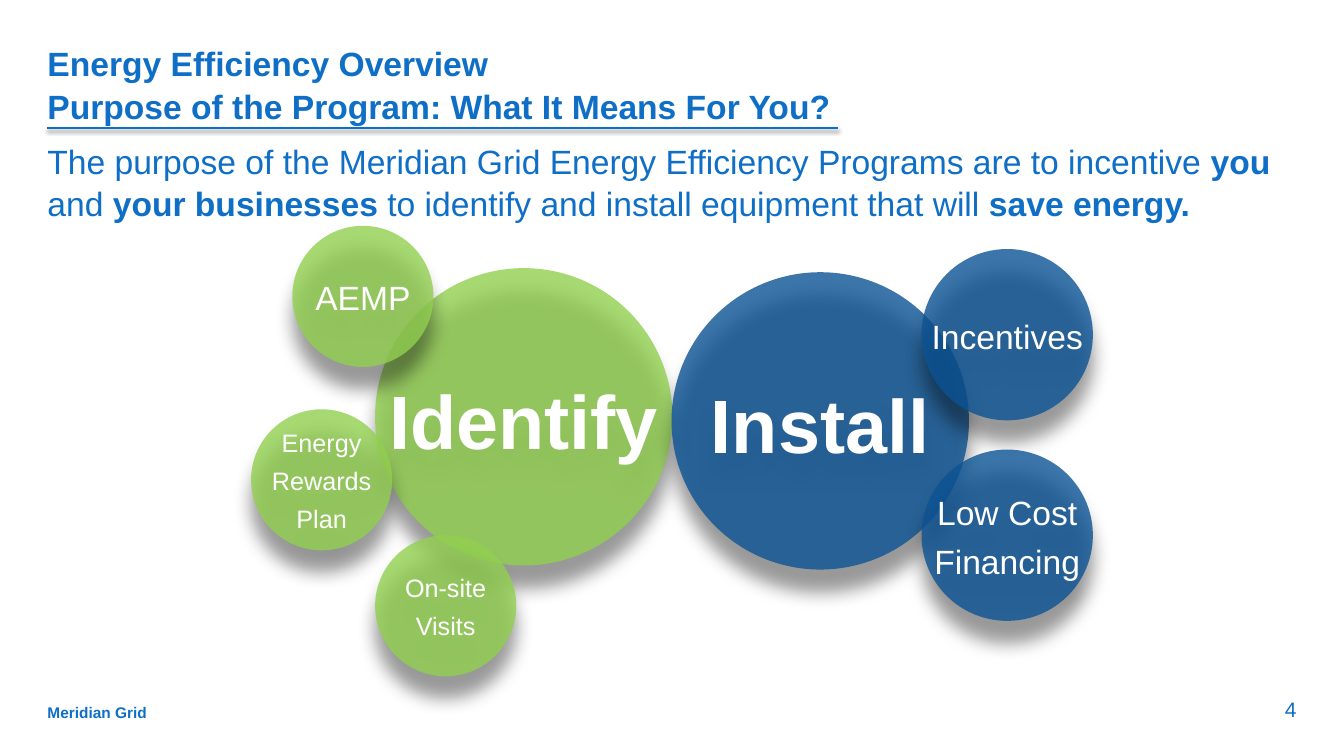
import pptx
import pptx.util
import pptx.dml.color
import pptx.enum.shapes
import pptx.enum.text
import pptx.oxml.ns
from dataclasses import dataclass
from lxml import etree

Align = pptx.enum.text.PP_ALIGN
Anchor = pptx.enum.text.MSO_ANCHOR
WIDE, HIGH = pptx.util.Inches(13.33), pptx.util.Inches(7.5)


@dataclass(frozen=True)
class Theme:
    font: str = "Arial"
    blue: str = "0F6FC6"
    navy: str = "0B5394"
    green: str = "92D050"
    white: str = "FFFFFF"
    black: str = "000000"
    hero: int = 54
    head: int = 24
    small: int = 18
    page: int = 15
    foot: int = 11
    # Circle sizes, in percent of slide width
    large: float = 22.13
    middle: float = 12.75
    little: float = 10.5
    lead: float = 1.05


THEME = Theme()
LEFT, SPAN = 3.53, 92.95


def across(share):
    return int(WIDE * share / 100)


def down(share):
    return int(HIGH * share / 100)


def color(code):
    return pptx.dml.color.RGBColor.from_string(code)


def assign(target, values):
    for name, value in values.items():
        setattr(target, name, value)


def add_node(parent, tag, **values):
    node = etree.SubElement(parent, pptx.oxml.ns.qn(tag))
    for name, value in values.items():
        node.set(name, str(value))
    return node


def add_shadow(item, alpha, blur, drop):
    props = item._element.spPr
    effects = props.find(pptx.oxml.ns.qn("a:effectLst"))
    if effects is None:
        effects = add_node(props, "a:effectLst")
    shade = add_node(effects, "a:outerShdw", blurRad=int(pptx.util.Pt(blur)),
                     dist=int(pptx.util.Pt(drop)), dir=90 * 60000,
                     algn="ctr", rotWithShape=0)
    tint = add_node(shade, "a:srgbClr", val=THEME.black)
    add_node(tint, "a:alpha", val=alpha * 1000)


def write(frame, lines, size, code, anchor, wrap=True, bold=False,
          align=Align.LEFT, after=0, lead=1.0):
    """Each line is a list of (text, bold) runs, or a plain string."""
    assign(frame, dict(margin_left=0, margin_right=0, margin_top=0,
                       margin_bottom=0, word_wrap=wrap,
                       vertical_anchor=anchor))
    for index, line in enumerate(lines):
        para = frame.add_paragraph() if index else frame.paragraphs[0]
        assign(para, dict(alignment=align, line_spacing=lead,
                          space_after=pptx.util.Pt(after)))
        for text, strong in [(line, bold)] if isinstance(line, str) else line:
            run = para.add_run()
            run.text = text
            assign(run.font, dict(name=THEME.font, bold=strong,
                                  size=pptx.util.Pt(size)))
            run.font.color.rgb = color(code)


def add_text(slide, left, top, width, height, lines, size, anchor, **style):
    box = slide.shapes.add_textbox(across(left), down(top),
                                   across(width), down(height))
    write(box.text_frame, lines, size, THEME.blue, anchor, **style)
    return box


def add_rule(slide, left, right, top):
    rule = slide.shapes.add_connector(
        pptx.enum.shapes.MSO_CONNECTOR.STRAIGHT,
        across(left), down(top), across(right), down(top))
    rule.line.color.rgb = color(THEME.blue)
    rule.line.width = pptx.util.Pt(2)
    add_shadow(rule, 38, 3.1, 1.6)


def add_circle(slide, x, y, share, code, lines, size, bold=False):
    """Place a circle by its centre, in percent of the slide."""
    side = across(share)
    ball = slide.shapes.add_shape(
        pptx.enum.shapes.MSO_SHAPE.OVAL,
        across(x) - side // 2, down(y) - side // 2, side, side)
    ball.shadow.inherit = False
    ball.fill.solid()
    ball.fill.fore_color.rgb = color(code)
    tint = ball._element.spPr.find(".//" + pptx.oxml.ns.qn("a:srgbClr"))
    add_node(tint, "a:alpha", val=80000)
    ball.line.fill.background()
    add_shadow(ball, 50, 13, 16)
    write(ball.text_frame, lines, size, THEME.white, Anchor.MIDDLE,
          wrap=False, bold=bold, align=Align.CENTER, after=4.5,
          lead=THEME.lead)


def main():
    deck = pptx.Presentation()
    assign(deck, dict(slide_width=WIDE, slide_height=HIGH))
    slide = deck.slides.add_slide(deck.slide_layouts[6])

    # Footer
    add_text(slide, 90.62, 92.13, 5.85, 3.33, ["4"], THEME.page,
             Anchor.BOTTOM, align=Align.RIGHT)
    add_text(slide, LEFT, 92.93, 9.98, 2.53, ["Meridian Grid"], THEME.foot,
             Anchor.BOTTOM, bold=True)

    # Heading and purpose
    add_text(slide, LEFT, 5.2, SPAN, 11.73,
             ["Energy Efficiency Overview",
              "Purpose of the Program: What It Means For You?"],
             THEME.head, Anchor.MIDDLE, bold=True, lead=THEME.lead)
    purpose = [
        ("The purpose of the Meridian Grid Energy Efficiency Programs "
         "are to incentive ", False),
        ("you", True), (" and ", False), ("your businesses ", True),
        ("to identify and install equipment that will ", False),
        ("save energy.", True)]
    add_text(slide, LEFT, 18.4, SPAN, 10.8, [purpose], THEME.head,
             Anchor.TOP, after=6, lead=THEME.lead)
    add_rule(slide, LEFT, 62.34, 16.93)

    # Two main steps
    add_circle(slide, 38.97, 55.13, THEME.large, THEME.green,
               ["Identify"], THEME.hero, bold=True)
    add_circle(slide, 61.03, 55.67, THEME.large, THEME.navy,
               ["Install"], THEME.hero, bold=True)

    # Ways to install
    for y, lines in [(44.27, ["Incentives"]),
                     (70.8, ["Low Cost", "Financing"])]:
        add_circle(slide, 74.94, y, THEME.middle, THEME.navy, lines,
                   THEME.head)

    # Ways to identify
    for x, y, lines, size in [
            (27, 39.2, ["AEMP"], THEME.head),
            (23.93, 63.47, ["Energy", "Rewards", "Plan"], THEME.small),
            (33.16, 80.13, ["On-site", "Visits"], THEME.small)]:
        add_circle(slide, x, y, THEME.little, THEME.green, lines, size)

    deck.save("out.pptx")


if __name__ == "__main__":
    main()
